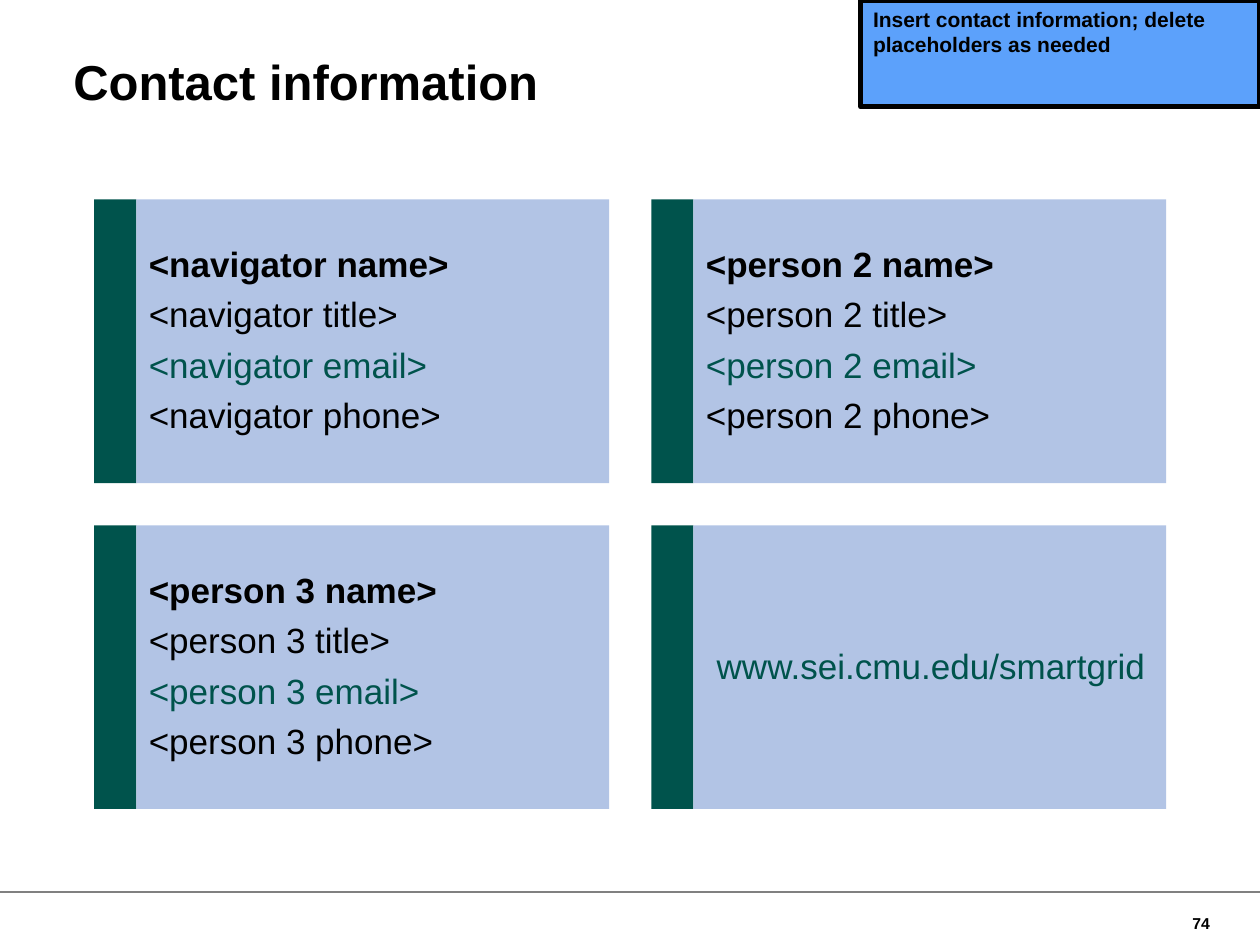
from dataclasses import dataclass
from typing import Any

from lxml.etree import SubElement
from pptx import Presentation
from pptx.dml.color import RGBColor
from pptx.enum.shapes import MSO_CONNECTOR, MSO_SHAPE
from pptx.enum.text import MSO_ANCHOR, PP_ALIGN
from pptx.oxml.ns import qn
from pptx.util import Cm, Pt


@dataclass(frozen=True)
class Theme:
    font: str = "Arial"
    ink: str = "000000"
    accent: str = "00534C"
    card: str = "B2C4E5"
    note: str = "5CA1FB"
    rule: str = "808080"
    title_size: int = 28
    card_size: int = 20
    note_size: int = 12
    number_size: int = 9


THEME = Theme()


@dataclass(frozen=True)
class Box:
    left: float
    top: float
    width: float
    height: float

    def lengths(self) -> list[Cm]:
        return [Cm(v) for v in (self.left, self.top, self.width, self.height)]


@dataclass(frozen=True)
class Line:
    text: str
    size: int
    color: str = THEME.ink
    bold: bool = False


def apply_format(target: Any, values: dict[str, Any]) -> None:
    for name, value in values.items():
        setattr(target, name, value)


def write(frame: Any, lines: list[Line], frame_format: dict[str, Any],
          paragraph_format: dict[str, Any], gap: int = 0) -> None:
    """Fill a text frame; gap is the space in points between paragraphs."""
    apply_format(frame, {"word_wrap": True, **frame_format})
    for index, line in enumerate(lines):
        paragraph = frame.add_paragraph() if index else frame.paragraphs[0]
        apply_format(paragraph, {"alignment": PP_ALIGN.LEFT, **paragraph_format})
        if index:
            paragraph.space_before = Pt(gap)
        run = paragraph.add_run()
        run.text = line.text
        apply_format(run.font, {"name": THEME.font, "size": Pt(line.size), "bold": line.bold})
        run.font.color.rgb = RGBColor.from_string(line.color)


def add_panel(slide: Any, box: Box, fill: str, border: float = 0) -> Any:
    panel = slide.shapes.add_shape(MSO_SHAPE.RECTANGLE, *box.lengths())
    panel.shadow.inherit = False
    panel.fill.solid()
    panel.fill.fore_color.rgb = RGBColor.from_string(fill)
    if border:
        panel.line.color.rgb = RGBColor.from_string(THEME.ink)
        panel.line.width = Pt(border)
    else:
        panel.line.fill.background()
    return panel


def person_lines(person: str) -> list[Line]:
    size = THEME.card_size
    return [
        Line(f"<{person} name>", size, bold=True),
        Line(f"<{person} title>", size),
        Line(f"<{person} email>", size, THEME.accent),
        Line(f"<{person} phone>", size),
    ]


def add_contact_grid(slide: Any) -> None:
    bar, width, height = 0.85, 9.53, 5.72
    left, top = 1.9, 4.02
    website = [Line("www.sei.cmu.edu/smartgrid", THEME.card_size, THEME.accent)]
    people = [person_lines(p) for p in ("navigator", "person 2", "person 3")]
    for index, lines in enumerate([*people, website]):
        row, column = divmod(index, 2)
        x = left + column * (width + 2 * bar)
        y = top + row * (height + bar)
        add_panel(slide, Box(x, y, bar, height), THEME.accent)
        card = add_panel(slide, Box(x + bar, y, width, height), THEME.card)
        is_website = lines is website
        write(
            card.text_frame, lines,
            {"vertical_anchor": MSO_ANCHOR.MIDDLE, "margin_left": Cm(0.25),
             "margin_right": Cm(0.2 if is_website else 0)},
            {"line_spacing": 0.95,
             "alignment": PP_ALIGN.CENTER if is_website else PP_ALIGN.LEFT},
            gap=6,
        )


def add_footer(slide: Any) -> None:
    rule = slide.shapes.add_connector(MSO_CONNECTOR.STRAIGHT, Cm(0), Cm(17.98), Cm(25.4), Cm(17.98))
    rule.line.color.rgb = RGBColor.from_string(THEME.rule)
    rule.line.width = Pt(1)
    SubElement(rule._element.spPr, qn("a:effectLst"))
    number = slide.shapes.add_textbox(*Box(23.77, 18.29, 0.89, 0.64).lengths())
    write(number.text_frame, [Line("74", THEME.number_size, bold=True)],
          {"word_wrap": False, "vertical_anchor": MSO_ANCHOR.MIDDLE},
          {"alignment": PP_ALIGN.CENTER})


def add_title(slide: Any) -> None:
    title = slide.shapes.add_textbox(*Box(1.48, 1.17, 22.65, 1.09).lengths())
    margins = ("margin_left", "margin_top", "margin_right", "margin_bottom")
    write(title.text_frame, [Line("Contact information", THEME.title_size, bold=True)],
          dict.fromkeys(margins, Cm(0)), {"line_spacing": 0.9})


def add_note(slide: Any) -> None:
    note = add_panel(slide, Box(17.35, 0, 8.05, 2.15), THEME.note, border=3)
    text = "Insert contact information; delete placeholders as needed"
    write(note.text_frame, [Line(text, THEME.note_size, bold=True)],
          {"vertical_anchor": MSO_ANCHOR.TOP}, {})


def main() -> None:
    presentation = Presentation()
    apply_format(presentation, {"slide_width": Cm(25.4), "slide_height": Cm(19.05)})
    slide = presentation.slides.add_slide(presentation.slide_layouts[6])
    add_footer(slide)
    add_title(slide)
    add_contact_grid(slide)
    add_note(slide)
    presentation.save("out.pptx")


if __name__ == "__main__":
    main()
